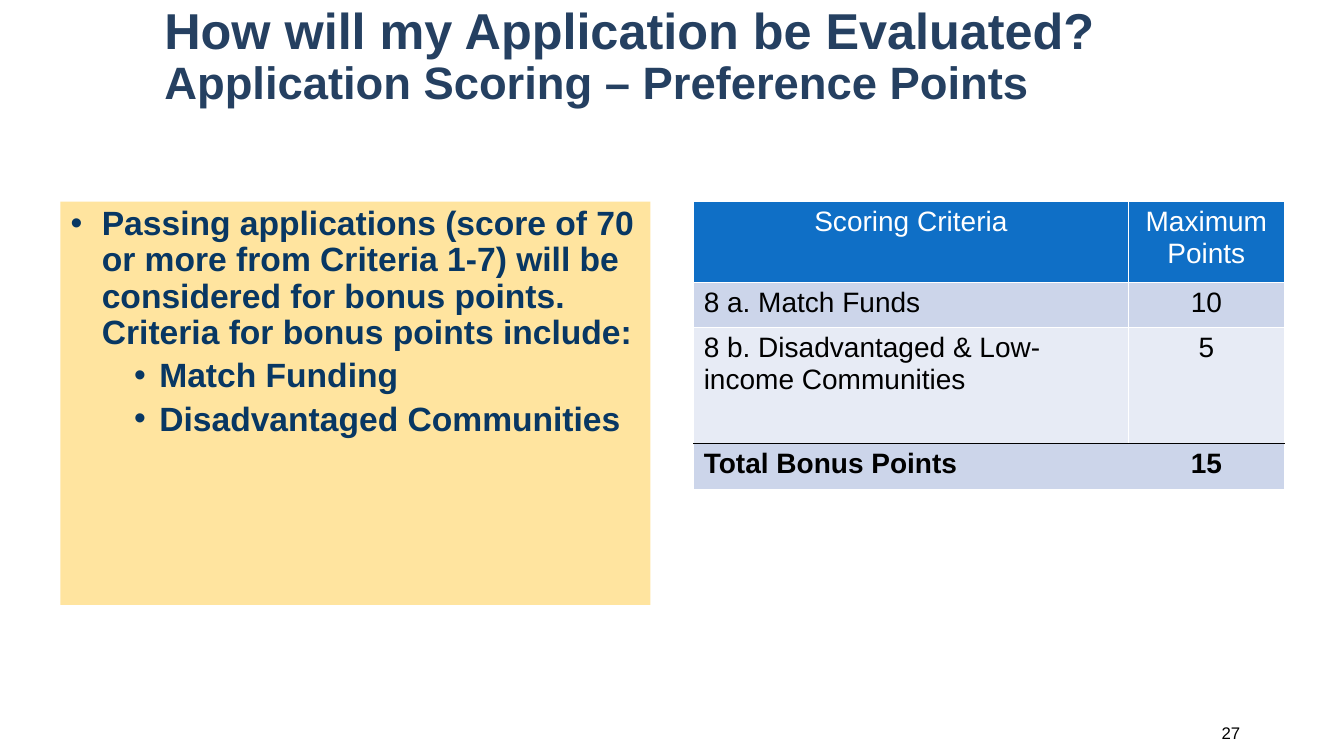
from dataclasses import dataclass

from lxml.etree import SubElement
from pptx import Presentation
from pptx.dml.color import RGBColor
from pptx.enum.text import MSO_ANCHOR, MSO_AUTO_SIZE, PP_ALIGN
from pptx.oxml.ns import qn
from pptx.util import Inches, Pt

# Content
TITLE = ["How will my Application be Evaluated?",
         "Application Scoring – Preference Points"]
BULLETS = [
    (0, "Passing applications (score of 70 or more from Criteria 1-7) will be "
        "considered for bonus points. Criteria for bonus points include:"),
    (1, "Match Funding"),
    (1, "Disadvantaged Communities"),
]
SCORES = [
    ("Scoring Criteria", "Maximum Points"),
    ("8 a. Match Funds", "10"),
    ("8 b. Disadvantaged & Low-income Communities", "5"),
    ("Total Bonus Points", "15"),
]
PAGE = "27"


@dataclass(frozen=True)
class Theme:
    font: str = "Arial"
    title: str = "254061"
    body: str = "083763"
    panel: str = "FFE49F"
    header: str = "0F6FC6"
    band_dark: str = "CCD5EA"
    band_light: str = "E7EBF5"
    white: str = "FFFFFF"
    black: str = "000000"
    title_sizes: tuple = (36, 32.4)
    body_size: int = 24
    table_size: int = 20
    page_size: int = 12


T = Theme()

# Layout: two equal panels sharing a top edge
TOP, PANEL_W, PANEL_H = 2, 5.85, 4
LEFT, RIGHT = 0.6, 6.88
COLS = (4.31, 1.55)
ROWS = (0.8, 0.45, 1.15, 0.45)
INDENTS = {0: (0.31, -0.31, 0), 1: (0.88, -0.25, 5)}  # margin, hang, space before


def place(sp, x, y, w, h):
    sp.left, sp.top, sp.width, sp.height = map(Inches, (x, y, w, h))


def style(font, size, color, bold=False):
    font.name, font.size, font.bold = T.font, Pt(size), bold
    font.color.rgb = RGBColor.from_string(color)


def add_bullet(p, margin, hang):
    pPr = p._p.get_or_add_pPr()
    pPr.set("marL", str(Inches(margin)))
    pPr.set("indent", str(Inches(hang)))
    SubElement(pPr, qn("a:buFont"), typeface=T.font)
    SubElement(pPr, qn("a:buChar"), char="•")


def add_borders(cell, **sides):
    """Each side is (color, points), or None for no line."""
    tcPr = cell._tc.get_or_add_tcPr()
    for side in "LRTB":
        line = sides[side]
        ln = SubElement(tcPr, qn(f"a:ln{side}"))
        if line is None:
            SubElement(ln, qn("a:noFill"))
            continue
        color, width = line
        ln.set("w", str(Pt(width)))
        fill = SubElement(ln, qn("a:solidFill"))
        SubElement(fill, qn("a:srgbClr"), val=color)


def add_title(s):
    sp = s.shapes.title
    place(sp, 1.53, 0.26, 10.89, 1.14)
    tf = sp.text_frame
    tf.text = "\v".join(TITLE)
    tf.auto_size, tf.word_wrap = MSO_AUTO_SIZE.NONE, True
    tf.vertical_anchor = MSO_ANCHOR.MIDDLE
    tf.margin_bottom = Inches(0.57)
    p = tf.paragraphs[0]
    p.alignment, p.line_spacing = PP_ALIGN.LEFT, 0.9
    for r, size in zip(p.runs, T.title_sizes):
        style(r.font, size, T.title, True)


def add_bullets(s):
    sp = s.placeholders[1]
    place(sp, LEFT, TOP, PANEL_W, PANEL_H)
    sp.fill.solid()
    sp.fill.fore_color.rgb = RGBColor.from_string(T.panel)
    tf = sp.text_frame
    tf.text = "\n".join(text for _, text in BULLETS)
    tf.auto_size, tf.word_wrap = MSO_AUTO_SIZE.NONE, True
    for p, (level, _) in zip(tf.paragraphs, BULLETS):
        margin, hang, before = INDENTS[level]
        p.level, p.line_spacing, p.space_before = level, 0.9, Pt(before)
        add_bullet(p, margin, hang)
        for r in p.runs:
            style(r.font, T.body_size, T.body, True)


def add_scores(s):
    table = s.shapes.add_table(len(ROWS), len(COLS), Inches(RIGHT), Inches(TOP),
                               Inches(sum(COLS)), Inches(sum(ROWS))).table
    table.first_row = table.horz_banding = False
    for column, width in zip(table.columns, COLS):
        column.width = Inches(width)
    last = len(SCORES) - 1
    thin, rule = (T.white, 1), (T.black, 1)
    for i, values in enumerate(SCORES):
        table.rows[i].height = Inches(ROWS[i])
        header, total = i == 0, i == last
        fill = T.header if header else T.band_dark if i % 2 else T.band_light
        side = None if total else thin
        bottom = None if total else rule if i == last - 1 else thin
        for j, value in enumerate(values):
            cell = table.cell(i, j)
            cell.text = value
            add_borders(cell, L=side, R=side, T=rule if total else thin, B=bottom)
            cell.fill.solid()
            cell.fill.fore_color.rgb = RGBColor.from_string(fill)
            p = cell.text_frame.paragraphs[0]
            p.alignment = PP_ALIGN.CENTER if header or j else PP_ALIGN.LEFT
            style(p.runs[0].font, T.table_size, T.white if header else T.black, total)


def add_page_number(s):
    sp = s.shapes.add_textbox(*map(Inches, (10.47, 7.07, 1.93, 0.4)))
    tf = sp.text_frame
    tf.text, tf.word_wrap = PAGE, True
    tf.vertical_anchor = MSO_ANCHOR.MIDDLE
    p = tf.paragraphs[0]
    p.alignment = PP_ALIGN.RIGHT
    style(p.runs[0].font, T.page_size, T.black)


def main():
    prs = Presentation()
    prs.slide_width, prs.slide_height = Inches(13.33), Inches(7.5)
    s = prs.slides.add_slide(prs.slide_layouts[1])
    add_title(s)
    add_bullets(s)
    add_scores(s)
    add_page_number(s)
    prs.save("out.pptx")


if __name__ == "__main__":
    main()
